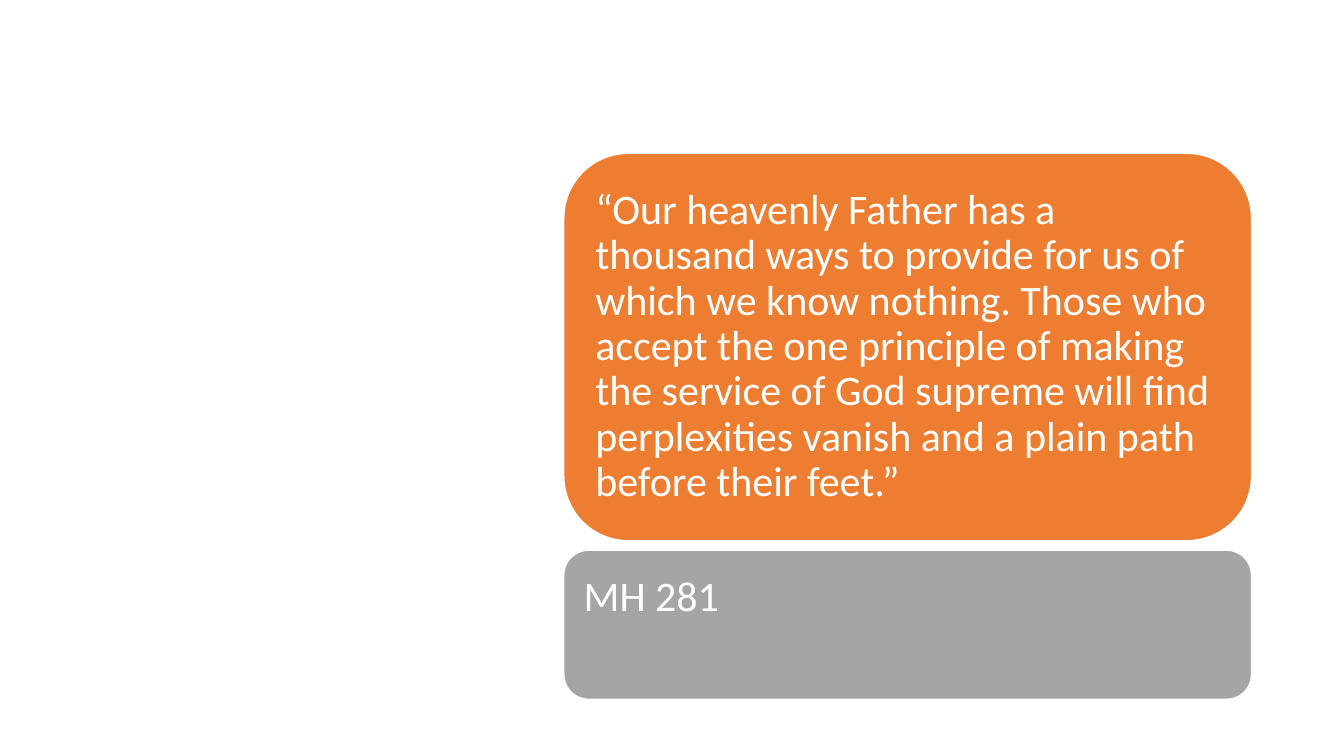
from pptx import Presentation
from pptx.dml.color import RGBColor
from pptx.enum.shapes import MSO_SHAPE
from pptx.enum.text import MSO_ANCHOR, PP_ALIGN
from pptx.util import Pt

PX = 9525
THEME = {
    "font": "Calibri",
    "size": Pt(30),
    "text": RGBColor.from_string("FFFFFF"),
    "outline": RGBColor.from_string("FFFFFF"),
    "quote": RGBColor.from_string("ED7D31"),
    "reference": RGBColor.from_string("A5A5A5"),
}
CARD_LEFT, CARD_WIDTH, INSET = 537, 655, 12

QUOTE = (
    "“Our heavenly Father has a thousand ways to provide for us of which we know nothing. "
    "Those who accept the one principle of making the service of God supreme will find "
    "perplexities vanish and a plain path before their feet.”"
)
CARDS = [
    ("quote", QUOTE, 146, 369, MSO_ANCHOR.MIDDLE, INSET),
    ("reference", "MH 281", 524, 142, MSO_ANCHOR.TOP, 17),
]

presentation = Presentation()
presentation.slide_width = 1280 * PX
presentation.slide_height = 720 * PX
slide = presentation.slides.add_slide(presentation.slide_layouts[6])

for role, text, top, height, anchor, top_inset in CARDS:
    card = slide.shapes.add_shape(
        MSO_SHAPE.ROUNDED_RECTANGLE, CARD_LEFT * PX, top * PX, CARD_WIDTH * PX, height * PX
    )
    card.shadow.inherit = False
    card.fill.solid()
    card.fill.fore_color.rgb = THEME[role]
    card.line.color.rgb = THEME["outline"]
    card.line.width = Pt(1)

    text_frame = card.text_frame
    text_frame.word_wrap = True
    text_frame.vertical_anchor = anchor
    text_frame.margin_left = text_frame.margin_right = text_frame.margin_bottom = INSET * PX
    text_frame.margin_top = top_inset * PX
    text_frame.text = text
    paragraph = text_frame.paragraphs[0]
    paragraph.alignment = PP_ALIGN.LEFT
    paragraph.line_spacing = 0.9
    font = paragraph.runs[0].font
    font.name = THEME["font"]
    font.size = THEME["size"]
    font.color.rgb = THEME["text"]

presentation.save("out.pptx")
